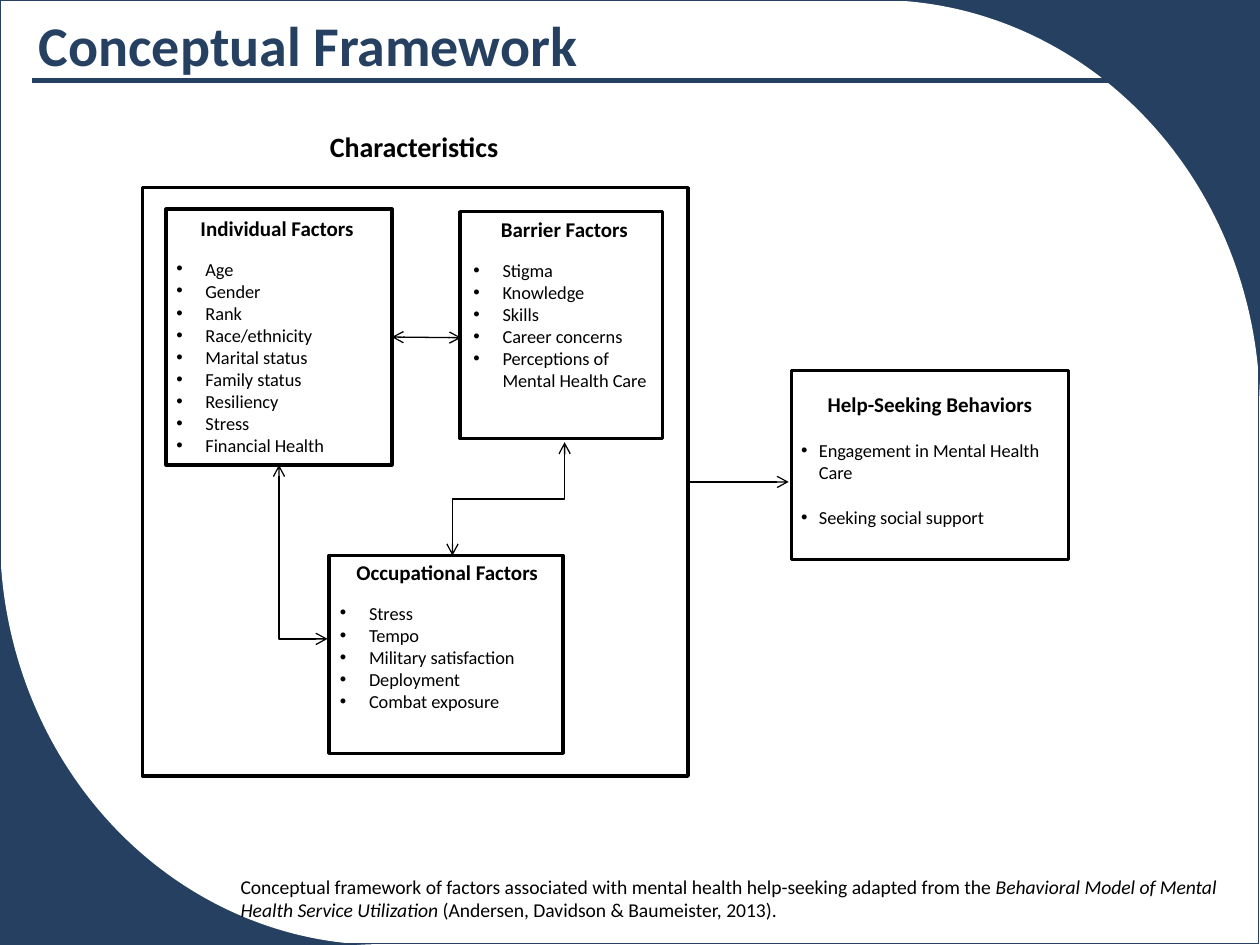
from lxml.etree import SubElement
from pptx import Presentation
from pptx.dml.color import RGBColor
from pptx.enum.shapes import MSO_CONNECTOR as Link, MSO_SHAPE as Kind
from pptx.enum.text import PP_ALIGN as Align
from pptx.oxml.ns import qn
from pptx.util import Pt

HUES = {"navy": "254061", "white": "FFFFFF", "black": "000000"}
FONT = "Calibri"


def hue(name):
    """Return the named colour."""
    return RGBColor.from_string(HUES[name])


def block(slide, box, fill=None, line=None, width=2, kind=Kind.RECTANGLE):
    """Draw a plain shape in the box."""
    shape = slide.shapes.add_shape(kind, *map(Pt, box))
    shape.shadow.inherit = False
    if fill:
        shape.fill.solid()
        shape.fill.fore_color.rgb = hue(fill)
    else:
        shape.fill.background()
    if line:
        shape.line.color.rgb = hue(line)
        shape.line.width = Pt(width)
    else:
        shape.line.fill.background()
    return shape


def label(slide, box, text, size, bold=False, color="black", side=7.2, top=3.6, wrap=True):
    """Place text in the box, one paragraph to each line."""
    frame = slide.shapes.add_textbox(*map(Pt, box)).text_frame
    frame.word_wrap = wrap
    frame.margin_left = frame.margin_right = Pt(side)
    frame.margin_top = frame.margin_bottom = Pt(top)
    frame.text = text
    for para in frame.paragraphs:
        for run in para.runs:
            style(run, size, bold, color)
    return frame


def style(run, size, bold=False, color="black"):
    """Set the font of a run."""
    font = run.font
    font.name, font.size, font.bold = FONT, Pt(size), bold
    font.color.rgb = hue(color)


def link(slide, start, end, color="black", width=0.75, kind=Link.STRAIGHT, tips=()):
    """Draw a connector with arrow tips at the named ends."""
    line = slide.shapes.add_connector(kind, *map(Pt, start + end))
    line.line.color.rgb = hue(color)
    line.line.width = Pt(width)
    props = line._element.spPr
    for tip in tips:
        SubElement(props.find(qn("a:ln")), qn("a:" + tip), type="arrow")
    SubElement(props, qn("a:effectLst"))
    return line


def panel(slide, box, title, items, shift, side=7.2, indent=16.6, gap=9.8, space=0):
    """Draw a bordered box with a centred title and bullets."""
    x, y, w, h = box
    dx, dy, dw = shift
    shape = block(slide, box, "white", "black")
    text = "\n".join([title, *items])
    frame = label(slide, (x + dx, y + dy, w + dw, h - dy), text, 10.5, side=side)
    head, *rest = frame.paragraphs
    head.alignment = Align.CENTER
    head.space_after = Pt(gap)
    style(head.runs[0], 12, True)
    for para in rest:
        para.space_after = Pt(space)
        props = para._p.get_or_add_pPr()
        props.set("marL", str(Pt(indent)))
        props.set("indent", str(-Pt(indent)))
        SubElement(props, qn("a:buFont"), typeface="Arial")
        SubElement(props, qn("a:buChar"), char="•")
    return shape


def backdrop(slide, box):
    """Draw the two curved corners and the thin border."""
    x, y, w, h = box
    cw, ch, ow, oh = 264, 252, 438, 468
    block(slide, (x, y + h - ch, cw, ch), "navy")
    block(slide, (x, y + h - oh, ow, oh), "white", kind=Kind.OVAL)
    block(slide, (x + w - cw, y, cw, ch), "navy")
    block(slide, (x + w - ow, y, ow, oh), "white", kind=Kind.OVAL)
    for left, top, wide, high in ((222, 510, 120, 30), (378, 0, 120, 30), (690, 228, 30, 120)):
        block(slide, (x + left, y + top, wide, high), "white")
    block(slide, (x, y, w - 0.7, h - 0.7), line="navy", width=0.75)


def header(slide, box):
    """Place the title and the rule below it."""
    x, y, w, h = box
    para = label(slide, (x, y, 406, h), "Conceptual Framework", 32, True, "navy").paragraphs[0]
    para.line_spacing = Pt(27)
    para._p.get_or_add_pPr().set("marL", str(Pt(2.9)))
    link(slide, (x + w, y + 32.3), (x + 5.8, y + 32.3), "navy", 2.5)


def model(slide, box):
    """Draw the factor panels, the outcome and their links."""
    x, y, w, h = box
    both = ("headEnd", "tailEnd")
    label(slide, (x + 100, y - 36.7, 112.3, 26.6), "Characteristics", 16, True, wrap=False)
    frame = block(slide, box, line="black")
    person = panel(
        slide, (x + 13.6, y + 12.2, 128.9, 146.2), "Individual Factors",
        ["Age", "Gender", "Rank", "Race/ethnicity", "Marital status", "Family status",
         "Resiliency", "Stress", "Financial Health"],
        (5.8, 0, -13.7), side=0)
    panel(
        slide, (x + 181.4, y + 13.7, 115.9, 129.6), "Barrier Factors",
        ["Stigma", "Knowledge", "Skills", "Career concerns", "Perceptions of Mental Health Care"],
        (0.7, -0.8, 2.2))
    panel(
        slide, (x + 106.5, y + 210.2, 133.9, 113), "Occupational Factors",
        ["Stress", "Tempo", "Military satisfaction", "Deployment", "Combat exposure"],
        (-0.7, -1.4, 2.9))
    panel(
        slide, (x + 370.8, y + 104.4, 158.4, 108), "Help-Seeking Behaviors",
        ["Engagement in Mental Health Care", "Seeking social support"],
        (-1.4, 8.6, 2.9), indent=10.1, gap=12.8, space=12.8)

    mid = y + h / 2
    link(slide, (x + w, mid), (x + 369.3, mid), tips=("tailEnd",)).begin_connect(frame, 3)
    pair = link(slide, (x + 142.5, y + 85.3), (x + 182.1, y + 85.7), tips=both)
    pair.begin_connect(person, 3)
    bend = link(slide, (x + 105.8, y + 257.8), (x + 78, y + 158.4), kind=Link.ELBOW, tips=both)
    bend._element.spPr.find(qn("a:prstGeom")).set("prst", "bentConnector2")
    bend.end_connect(person, 2)

    cx, cy, wide, high = x + 209.2, y + 177.8, 64.1, 64.8
    step = link(slide, (cx - high / 2, cy - wide / 2), (cx + high / 2, cy + wide / 2),
                kind=Link.ELBOW, tips=both)
    step._element.spPr.find(qn("a:xfrm")).set("rot", str(90 * 60000))


def source(slide, box):
    """Place the citation with the model's name in italics."""
    parts = (
        "Conceptual framework of factors associated with mental health help-seeking adapted from the ",
        "Behavioral Model of Mental Health Service Utilization",
        " (Andersen, Davidson & Baumeister, 2013).")
    para = label(slide, box, "", 11.2, side=5, top=2.9).paragraphs[0]
    for part in parts:
        run = para.add_run()
        run.text = part
        style(run, 11.2)
        run.font.italic = part == parts[1]


def main():
    """Build and save the slide."""
    deck = Presentation()
    deck.slide_width, deck.slide_height = Pt(720), Pt(540)
    slide = deck.slides.add_slide(deck.slide_layouts[6])
    backdrop(slide, (0, 0, 720, 540))
    header(slide, (12.2, 13.7, 623.6, 34.6))
    model(slide, (81.4, 107.3, 311.8, 336.2))
    source(slide, (132.5, 496.8, 573.8, 42.5))
    deck.save("out.pptx")


if __name__ == "__main__":
    main()
